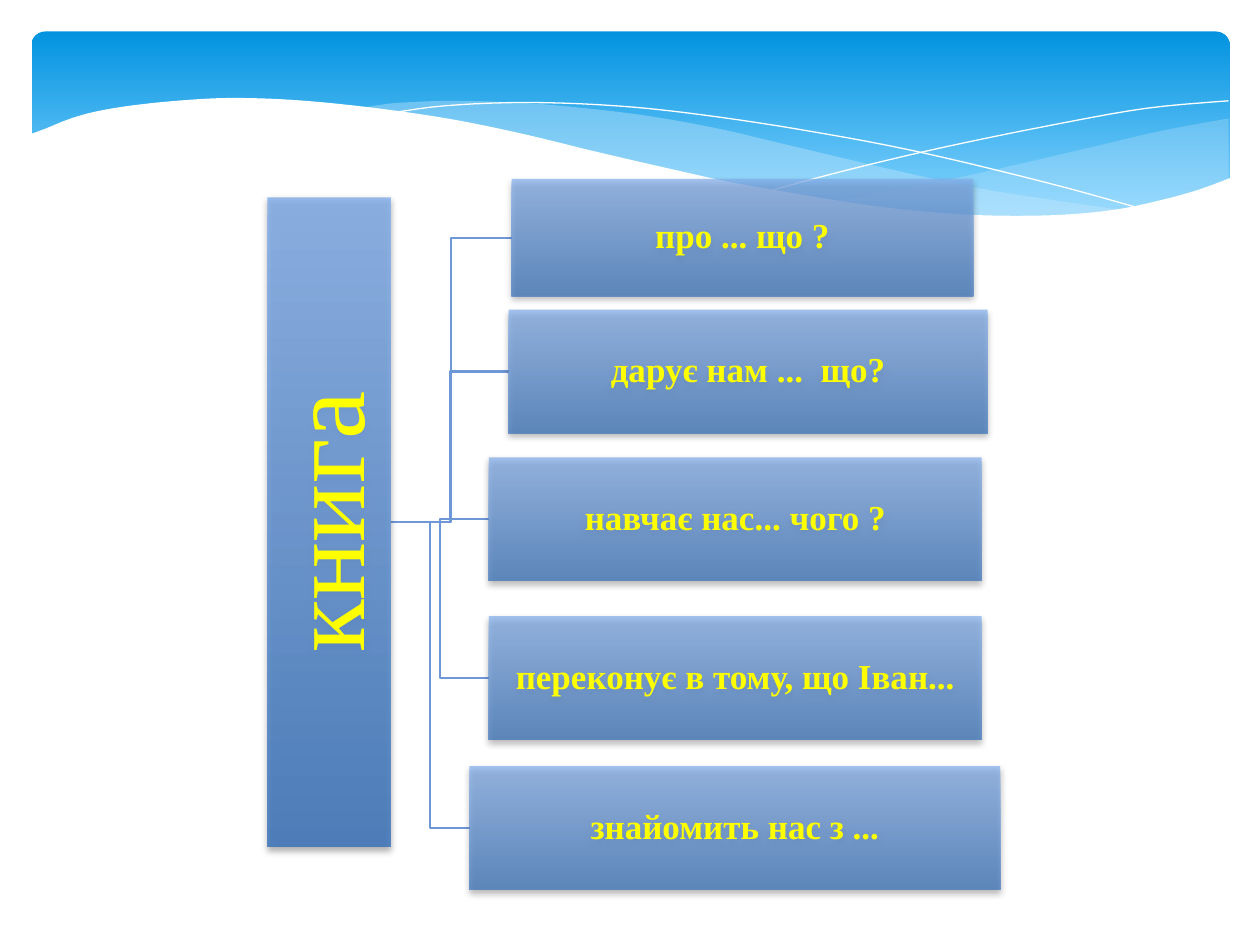
from pptx import Presentation
from pptx.dml.color import RGBColor
from pptx.enum.shapes import MSO_CONNECTOR, MSO_SHAPE
from pptx.enum.text import MSO_ANCHOR, PP_ALIGN
from pptx.oxml.ns import qn
from pptx.util import Pt
from lxml import etree

RECT, ROUND = MSO_SHAPE.RECTANGLE, MSO_SHAPE.ROUNDED_RECTANGLE
ELBOW = MSO_CONNECTOR.ELBOW
MIDDLE, CENTER = MSO_ANCHOR.MIDDLE, PP_ALIGN.CENTER

WHITE = RGBColor(0xFF, 0xFF, 0xFF)
YELLOW = RGBColor(0xFF, 0xFF, 0x00)
BLACK = RGBColor(0x00, 0x00, 0x00)
SKY = RGBColor(0x02, 0x93, 0xE0)
PALE = RGBColor(0x83, 0xD3, 0xFE)
MIST = RGBColor(0xC6, 0xE7, 0xFC)
LIGHT = RGBColor(0x80, 0xAC, 0xEA)
DARK = RGBColor(0x35, 0x70, 0xBA)
LINK = RGBColor(0x6E, 0x97, 0xD8)
FONT = "Times New Roman"

# Wave edges, as knots of smooth curves
RIGHT_TOP = [(702, 67.7), (663, 74.9), (620, 85), (561, 98.6),
             (508, 109.4), (476, 115.2)]
RIGHT_LOW = [(476, 115.2), (508, 118.8), (545, 122.4), (578, 123.8),
             (615, 122.4), (652, 117.4), (678, 110.9), (702, 102)]
MID_LOW = [(643, 120.2), (603, 114.5), (558, 107.3), (508, 96.5),
           (453, 83.5), (410, 73.4), (370, 66.2), (335, 61.9),
           (302, 59), (260, 57.6), (225, 59), (206, 61.9)]
MID_TOP = [(206, 61.9), (246, 67.7), (291, 76.3), (354, 90.7),
           (408, 103), (456, 112.3), (500, 118.8), (539, 122.4),
           (581, 124.6), (617, 123.5), (643, 120.2)]
LONG_LINE = [(222.5, 64.8), (254, 60.5), (300, 58.6), (352, 60.5),
             (400, 65.5), (458, 74.2), (523, 86.4), (598, 104.4), (653, 119.5)]
SHORT_LINE = [(441, 108.7), (484, 97.2), (539, 84.2), (602, 71.3),
              (655, 61.9), (702, 57.6)]
BASE_TOP = [(16.5, 77), (26, 73.5), (42.5, 67), (61, 62.5), (86, 59),
            (116, 56.5), (139, 56), (166, 57), (195, 59.5), (228, 63.5),
            (263, 69), (301, 77), (342, 87), (381, 96), (417, 104),
            (451, 110), (481, 115), (510, 119), (548, 122.4), (582, 123.3),
            (612, 122.4), (639, 119.5), (662, 114.7), (684, 108.7),
            (703.5, 101.5)]
BASE_LOW = [(703.5, 161), (16.5, 161)]

# Text, left, top, width, height
BOXES = [
    ("про ... що ?", 292.4, 102.3, 263.8, 67),
    ("дарує нам ...  що?", 290.6, 177, 273.8, 70.6),
    ("навчає нас... чого ?", 279.4, 261.4, 281.6, 70.6),
    ("переконує в тому, що Іван...", 279.4, 352.1, 281.6, 70.6),
    ("знайомить нас з ...", 268.3, 437.8, 303.3, 70.6),
]
HUB = (223.3, 298.3)


def smooth(knots, steps=5):
    """Points of a Catmull-Rom curve through the knots."""
    ends = [knots[0], *knots, knots[-1]]
    dots = []
    for a, b, c, d in zip(ends, ends[1:], ends[2:], ends[3:]):
        for i in range(steps):
            t = i / steps
            dots.append(tuple(
                q + t * (r - p) / 2
                + t * t * (2 * p - 5 * q + 4 * r - s) / 2
                + t ** 3 * (3 * q - p - 3 * r + s) / 2
                for p, q, r, s in zip(a, b, c, d)))
    return dots + [knots[-1]]


def fade(shape, alpha):
    """Make the fill colours let the ground through; alpha in percent."""
    for tint in list(shape._element.spPr.iter(qn("a:srgbClr"))):
        etree.SubElement(tint, qn("a:alpha"), val=str(alpha * 1000))


def blend(shape, first, last, end=1, angle=270):
    shape.fill.gradient()
    shape.fill.gradient_angle = angle
    for stop, color, place in zip(shape.fill.gradient_stops,
                                  (first, last), (0, end)):
        stop.color.rgb = color
        stop.position = place


def add_shadow(shape):
    effect = shape._element.spPr.find(qn("a:effectLst"))
    outer = etree.SubElement(effect, qn("a:outerShdw"), blurRad=str(Pt(4)),
                             dist=str(Pt(2)), dir="5400000", rotWithShape="0")
    tint = etree.SubElement(outer, qn("a:srgbClr"), val=str(BLACK))
    etree.SubElement(tint, qn("a:alpha"), val="38000")


def add_box(slide, kind, left, top, width, height):
    shape = slide.shapes.add_shape(kind, Pt(left), Pt(top),
                                   Pt(width), Pt(height))
    shape.shadow.inherit = False
    shape.line.fill.background()
    return shape


def add_path(slide, dots, close):
    (x, y), *rest = [(Pt(a), Pt(b)) for a, b in dots]
    pen = slide.shapes.build_freeform(x, y, scale=1.0)
    pen.add_line_segments(rest, close=close)
    shape = pen.convert_to_shape()
    shape.shadow.inherit = False
    return shape


def add_wave(slide, dots, color, alpha=100):
    shape = add_path(slide, dots, True)
    shape.fill.solid()
    shape.fill.fore_color.rgb = color
    shape.line.fill.background()
    if alpha < 100:
        fade(shape, alpha)


def add_curve(slide, knots):
    shape = add_path(slide, smooth(knots), False)
    shape.fill.background()
    shape.line.color.rgb = WHITE
    shape.line.width = Pt(0)


def add_link(slide, x, y):
    link = slide.shapes.add_connector(ELBOW, Pt(HUB[0]), Pt(HUB[1]),
                                      Pt(x), Pt(y))
    link.line.color.rgb = LINK
    link.line.width = Pt(1.25)
    etree.SubElement(link._element.spPr, qn("a:effectLst"))


def write(shape, text, size, bold=False, inset=1):
    frame = shape.text_frame
    frame.word_wrap = True
    frame.vertical_anchor = MIDDLE
    frame.margin_left = frame.margin_right = Pt(inset)
    frame.margin_top = frame.margin_bottom = Pt(inset)
    para = frame.paragraphs[0]
    para.alignment = CENTER
    para.line_spacing = 0.9
    run = para.add_run()
    run.text = text
    run.font.name = FONT
    run.font.size = Pt(size)
    run.font.bold = bold
    run.font.color.rgb = YELLOW


def add_banner(slide):
    band = add_box(slide, ROUND, 18, 18, 684.7, 112.3)
    band.adjustments[0] = 0.07
    blend(band, SKY, PALE, end=0.9)
    add_wave(slide, smooth(RIGHT_TOP) + smooth(RIGHT_LOW), MIST, 29)
    add_wave(slide, smooth(MID_LOW) + smooth(MID_TOP), MIST, 40)
    add_curve(slide, LONG_LINE)
    add_curve(slide, SHORT_LINE)
    add_wave(slide, smooth(BASE_TOP) + BASE_LOW, WHITE)


def add_tree(slide):
    for _, left, top, _, height in reversed(BOXES):
        add_link(slide, left, top + height / 2)
    root = add_box(slide, RECT, 2.6, 263, 371, 70.6)
    root.rotation = 270
    blend(root, LIGHT, DARK, angle=180)  # runs downwards once turned
    fade(root, 80)
    add_shadow(root)
    write(root, "книга", 62, inset=3)
    for text, *place in BOXES:
        box = add_box(slide, RECT, *place)
        blend(box, LIGHT, DARK)
        fade(box, 70)
        add_shadow(box)
        write(box, text, 20, bold=True)


def main():
    deck = Presentation()
    deck.slide_width, deck.slide_height = Pt(720), Pt(540)
    slide = deck.slides.add_slide(deck.slide_layouts[6])
    add_banner(slide)
    add_tree(slide)
    deck.save("out.pptx")


if __name__ == "__main__":
    main()
